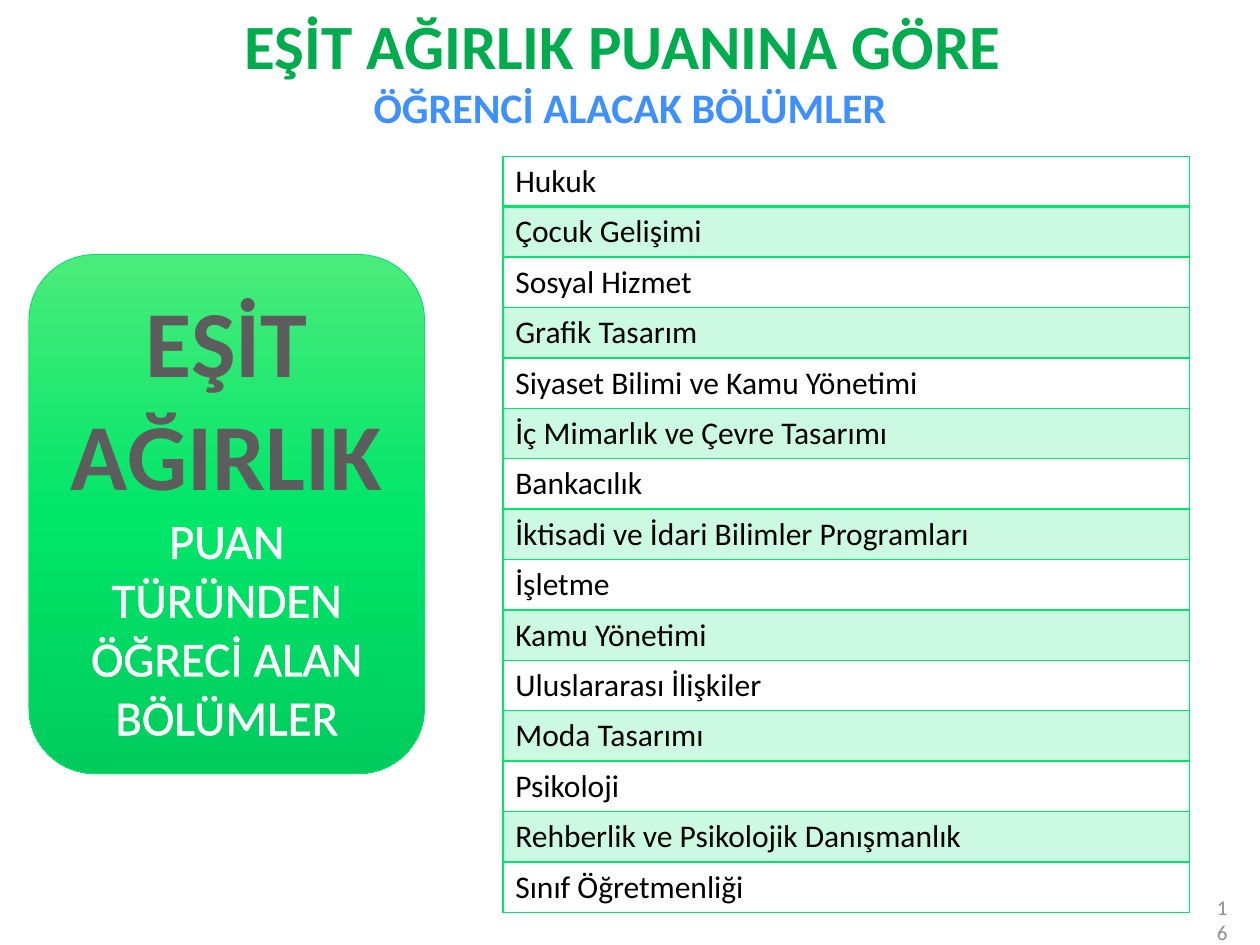
from copy import deepcopy
from lxml import etree
from pptx import Presentation, util as u
from pptx.dml.color import RGBColor
from pptx.enum import shapes, text
from pptx.oxml.ns import qn

GREEN = RGBColor(0x01, 0xE5, 0x69)
TITLE = RGBColor(0x01, 0xAC, 0x4F)
BLUE = RGBColor(0x3F, 0x90, 0xFF)
GREY = RGBColor(0x5D, 0x5D, 0x5D)
PALE = RGBColor(0x8C, 0x8C, 0x8C)
WHITE = RGBColor(255, 255, 255)
BLACK = RGBColor(0, 0, 0)
FADE = [(0, RGBColor(0x4B, 0xEC, 0x7B)), (0.5, RGBColor(0, 0xE6, 0x69)),
        (1, RGBColor(0, 0xCC, 0x5D))]

HEAD = [[("EŞİT AĞIRLIK PUANINA GÖRE ", 36, TITLE, True)],
        [("ÖĞRENCİ ALACAK BÖLÜMLER", 24, BLUE, True)]]
CARD = [[("EŞİT AĞIRLIK", 54, GREY, True), (" ", 28, GREY, True),
         ("PUAN TÜRÜNDEN ÖĞRECİ ALAN BÖLÜMLER", 28, WHITE, False)]]
PAGE = [[("16", 12, PALE, False)]]
FIELDS = ["Hukuk", "Çocuk Gelişimi", "Sosyal Hizmet", "Grafik Tasarım",
          "Siyaset Bilimi ve Kamu Yönetimi", "İç Mimarlık ve Çevre Tasarımı",
          "Bankacılık", "İktisadi ve İdari Bilimler Programları", "İşletme",
          "Kamu Yönetimi", "Uluslararası İlişkiler", "Moda Tasarımı",
          "Psikoloji", "Rehberlik ve Psikolojik Danışmanlık",
          "Sınıf Öğretmenliği"]

CENTER, RIGHT, LEFT = (text.PP_ALIGN.CENTER, text.PP_ALIGN.RIGHT,
                       text.PP_ALIGN.LEFT)
TOP, MIDDLE = text.MSO_ANCHOR.TOP, text.MSO_ANCHOR.MIDDLE


def box(*lengths):
    return [u.Inches(n) for n in lengths]


def write(frame, paras, align, anchor):
    form = {"word_wrap": True, "vertical_anchor": anchor,
            "auto_size": text.MSO_AUTO_SIZE.NONE}
    for key, val in form.items():
        setattr(frame, key, val)
    for i, runs in enumerate(paras):
        para = frame.add_paragraph() if i else frame.paragraphs[0]
        para.alignment = align
        for words, size, color, bold in runs:
            run = para.add_run()
            run.text = words
            font = {"name": "Calibri", "size": u.Pt(size), "bold": bold}
            for key, val in font.items():
                setattr(run.font, key, val)
            run.font.color.rgb = color


def stroke(line, color):
    solid = etree.SubElement(line, qn("a:solidFill"))
    etree.SubElement(solid, qn("a:srgbClr"), val=str(color))


def border(cell, side, width):
    stroke(etree.SubElement(cell._tc.get_or_add_tcPr(), qn("a:ln" + side),
                            w=str(u.Pt(width))), GREEN)


deck = Presentation()
deck.slide_width, deck.slide_height = box(10, 7.5)
slide = deck.slides.add_slide(deck.slide_layouts[5])

title = slide.shapes.title
title.left, title.top, title.width, title.height = box(0, 0, 10, 1.11)
title.fill.solid()
title.fill.fore_color.rgb = WHITE
write(title.text_frame, HEAD, CENTER, TOP)
for para in title.text_frame.paragraphs:
    para.space_before = u.Pt(0)

card = slide.shapes.add_shape(shapes.MSO_SHAPE.ROUNDED_RECTANGLE,
                              *box(0.23, 2.02, 3.14, 4.12))
card.shadow.inherit = False
card.line.color.rgb = GREEN
card.line.width = u.Pt(0.5)
card.fill.gradient()
card.fill.gradient_angle = 270
stops = card._element.spPr.find(".//" + qn("a:gsLst"))
stops.append(deepcopy(stops[-1]))
for stop, (place, color) in zip(card.fill.gradient_stops, FADE):
    stop.position = place
    stop.color.rgb = color
write(card.text_frame, CARD, CENTER, MIDDLE)
for run in card.text_frame.paragraphs[0].runs:
    edge = etree.Element(qn("a:ln"), w=str(u.Pt(1.4)))
    stroke(edge, WHITE)
    run._r.get_or_add_rPr().insert(0, edge)

page = slide.shapes.add_textbox(*box(9.49, 7.1, 0.35, 0.4))
write(page.text_frame, PAGE, RIGHT, MIDDLE)

grid = slide.shapes.add_table(len(FIELDS), 1, *box(3.99, 1.24, 5.45, 6)).table
grid.first_row = grid.horz_banding = False
for i, name in enumerate(FIELDS):
    cell = grid.cell(i, 0)
    cell.margin_bottom = u.Inches(0.04)
    write(cell.text_frame, [[(name, 18, BLACK, False)]], LEFT, TOP)
    for side in "LRTB":
        heavy = (i, side) in [(0, "B"), (1, "T")]
        border(cell, side, 2 if heavy else 1)
    if i % 2:
        cell.fill.solid()
        cell.fill.fore_color.rgb = GREEN
        tint = cell._tc.tcPr.find(qn("a:solidFill"))[0]
        etree.SubElement(tint, qn("a:alpha"), val="20000")
    else:
        cell.fill.background()

deck.save("out.pptx")
